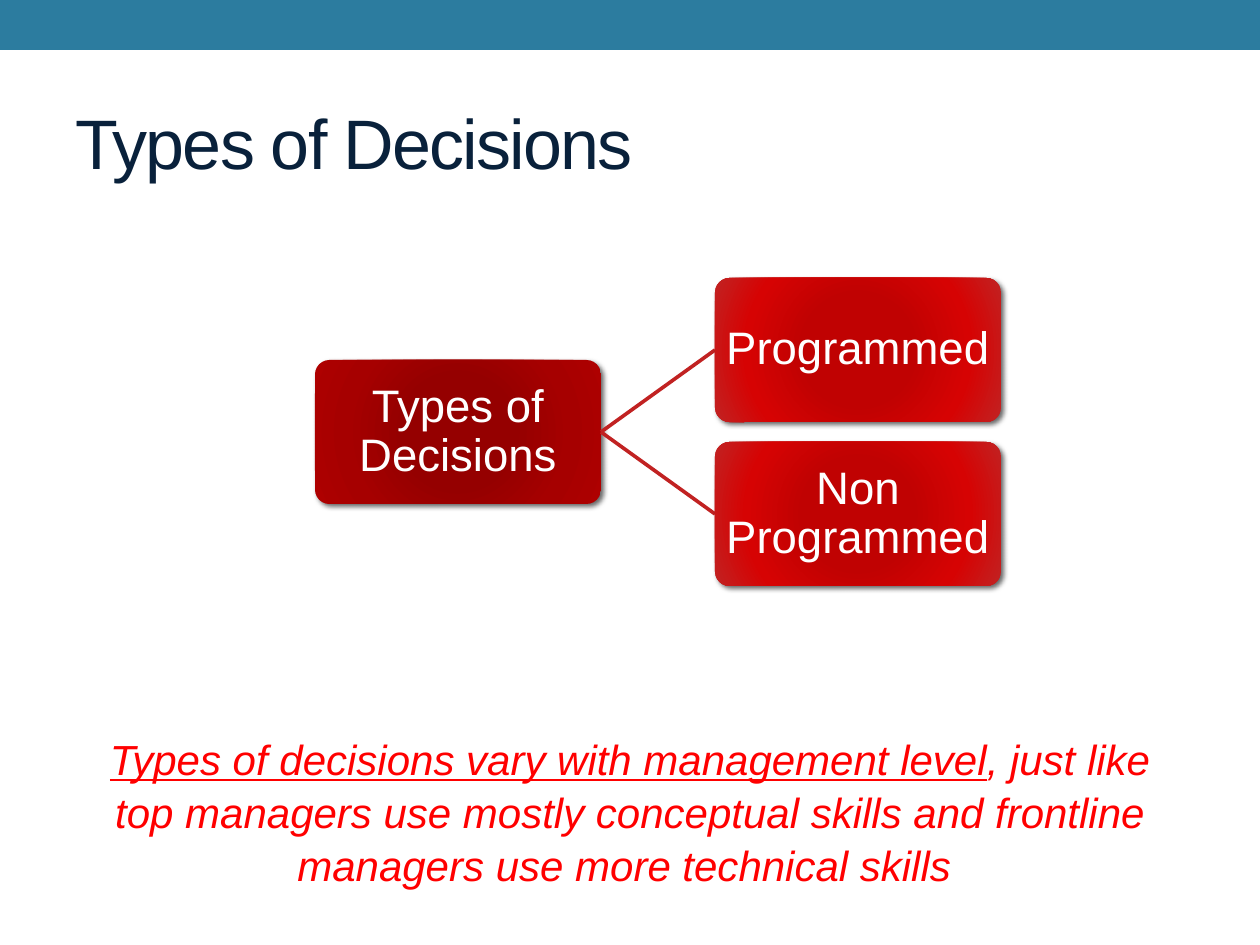
import pptx
import pptx.util
import pptx.dml.color
import pptx.enum.shapes
import pptx.enum.text
import pptx.oxml
import pptx.oxml.ns
from lxml import etree

PX = 914400 // 126
HEX = {"bar": "2C7C9F", "title": "09213B", "note": "FF0000",
       "line": "C12222", "white": "FFFFFF", "shade": "000000"}
ROOT_FILL = [(0, "950000"), (34, "950000"), (70, "A60000"), (100, "AE0000")]
KIND_FILL = [(0, "C30000"), (34, "C00202"), (70, "D60303"), (100, "C12222")]

# Content
TITLE = "Types of Decisions"
ROOT = "Types of Decisions"
KINDS = ["Programmed", "Non Programmed"]
NOTE = [("Types of decisions vary with management level", True),
        (", just like top managers use mostly conceptual skills and "
         "frontline managers use more technical skills ", False)]

# Tree layout in px
BOX_W, BOX_H = 286, 144
ROOT_X, KIND_X = 315, 715
MID_Y, STEP = 432, 164

MSO = pptx.enum.shapes
ANCHOR = pptx.enum.text.MSO_ANCHOR
ALIGN = pptx.enum.text.PP_ALIGN
NS = pptx.oxml.ns.nsdecls("a")


def px(*vals):
    return [pptx.util.Emu(v * PX) for v in vals]


def rgb(name):
    return pptx.dml.color.RGBColor.from_string(HEX[name])


def write(shape, runs, size, color, align=ALIGN.LEFT, anchor=ANCHOR.MIDDLE,
          italic=False, leading=1.0, inset=None, track=None):
    """Fill a shape with one paragraph of (text, underline) runs."""
    frame = shape.text_frame
    frame.word_wrap = True
    frame.vertical_anchor = anchor
    if inset is not None:
        for side in ("left", "top", "right", "bottom"):
            setattr(frame, "margin_" + side, px(inset)[0])
    para = frame.paragraphs[0]
    para.alignment = align
    para.line_spacing = leading
    for text, under in runs:
        run = para.add_run()
        run.text = text
        font = run.font
        font.name, font.size = "Arial", pptx.util.Pt(size)
        font.italic, font.underline = italic, under
        font.color.rgb = rgb(color)
        if track is not None:
            font._element.set("spc", str(track))


def node(shapes, text, left, mid, stops):
    """Rounded box with a radial gradient and a soft shadow."""
    box = shapes.add_shape(MSO.MSO_SHAPE.ROUNDED_RECTANGLE,
                           *px(left, mid - BOX_H // 2, BOX_W, BOX_H))
    box.adjustments[0] = 0.1
    box.line.fill.background()
    marks = "".join(f'<a:gs pos="{pos * 1000}"><a:srgbClr val="{tone}"/></a:gs>'
                    for pos, tone in stops)
    fill = pptx.oxml.parse_xml(
        f'<a:gradFill {NS} rotWithShape="1"><a:gsLst>{marks}</a:gsLst>'
        '<a:path path="circle"><a:fillToRect l="100000" t="100000" '
        'r="100000" b="100000"/></a:path></a:gradFill>')
    glow = pptx.oxml.parse_xml(
        f'<a:effectLst {NS}><a:outerShdw blurRad="38100" dist="25400" '
        f'dir="2700000" rotWithShape="0"><a:srgbClr val="{HEX["shade"]}">'
        '<a:alpha val="60000"/></a:srgbClr></a:outerShdw></a:effectLst>')
    props = box._element.spPr
    props.find(pptx.oxml.ns.qn("a:prstGeom")).addnext(fill)
    props.append(glow)
    write(box, [(text, False)], 26, "white", align=ALIGN.CENTER,
          leading=0.9, inset=2)


def link(shapes, *ends):
    line = shapes.add_connector(MSO.MSO_CONNECTOR.STRAIGHT, *px(*ends))
    line.line.color.rgb = rgb("line")
    line.line.width = pptx.util.Pt(2.08)
    etree.SubElement(line._element.spPr, pptx.oxml.ns.qn("a:effectLst"))


def main():
    deck = pptx.Presentation()
    deck.slide_width, deck.slide_height = px(1260, 945)
    shapes = deck.slides.add_slide(deck.slide_layouts[6]).shapes

    # Top bar
    bar = shapes.add_shape(MSO.MSO_SHAPE.RECTANGLE, *px(0, 0, 1260, 50))
    bar.shadow.inherit = False
    bar.fill.solid()
    bar.fill.fore_color.rgb = rgb("bar")
    bar.line.fill.background()

    # Title and note
    write(shapes.add_textbox(*px(63, 73, 1134, 136)), [(TITLE, False)],
          40, "title", track=-100)
    write(shapes.add_textbox(*px(63, 725, 1134, 193)), NOTE, 24, "note",
          align=ALIGN.CENTER, anchor=ANCHOR.TOP, italic=True, leading=1.05)

    # Decision tree
    node(shapes, ROOT, ROOT_X, MID_Y, ROOT_FILL)
    for i, kind in enumerate(KINDS):
        mid = MID_Y + (2 * i - len(KINDS) + 1) * STEP // 2
        link(shapes, ROOT_X + BOX_W, MID_Y, KIND_X, mid)
        node(shapes, kind, KIND_X, mid, KIND_FILL)

    deck.save("out.pptx")


if __name__ == "__main__":
    main()
